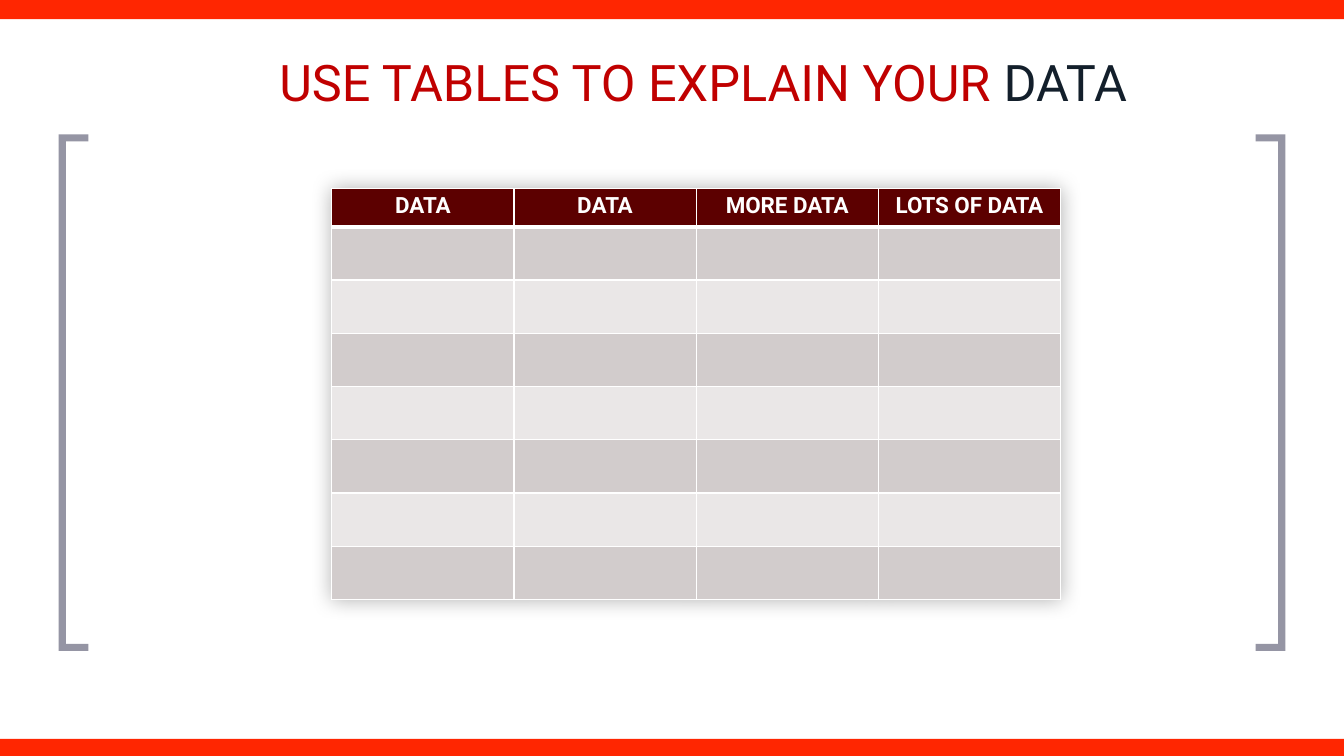
import pptx
import pptx.util
import pptx.dml.color
import pptx.enum.shapes
import pptx.enum.text
import pptx.oxml
import pptx.oxml.ns

WIDE = pptx.util.Inches(13.33)
HIGH = pptx.util.Inches(7.5)
FONT = "Roboto"
HEADS = ["DATA", "DATA", "MORE DATA", "LOTS OF DATA"]
BANDS = ["D2CCCC", "EAE7E7"]
ROWS = 8


def color(code):
    return pptx.dml.color.RGBColor.from_string(code)


def area(left, top, width, height):
    return (int(WIDE * left / 100), int(HIGH * top / 100),
            int(WIDE * width / 100), int(HIGH * height / 100))


def paint(shape, code):
    shape.shadow.inherit = False
    shape.fill.solid()
    shape.fill.fore_color.rgb = color(code)
    shape.line.fill.background()


def add_run(para, text, size, code, bold=False):
    run = para.add_run()
    run.text = text
    run.font.name = FONT
    run.font.size = pptx.util.Pt(size)
    run.font.bold = bold
    run.font.color.rgb = color(code)


def add_bar(slide, box):
    kind = pptx.enum.shapes.MSO_SHAPE.RECTANGLE
    paint(slide.shapes.add_shape(kind, *box), "FF2601")


def add_bracket(slide, box, flip):
    left, top, width, height = box
    thick = int(width * 0.24)
    points = [(0, 0), (width, 0), (width, thick), (thick, thick),
              (thick, height - thick), (width, height - thick),
              (width, height), (0, height)]
    points = [(left + (width - x if flip else x), top + y) for x, y in points]
    form = slide.shapes.build_freeform(*points[0])
    form.add_line_segments(points[1:], close=True)
    paint(form.convert_to_shape(), "9595A4")


def add_title(slide, box):
    title = slide.shapes.title
    title.left, title.top, title.width, title.height = box
    frame = title.text_frame
    frame.word_wrap = True
    frame.auto_size = pptx.enum.text.MSO_AUTO_SIZE.NONE
    frame.vertical_anchor = pptx.enum.text.MSO_ANCHOR.BOTTOM
    inset = pptx.util.Inches(0.1)
    frame.margin_left = frame.margin_right = inset
    frame.margin_top = frame.margin_bottom = inset
    para = frame.paragraphs[0]
    para.alignment = pptx.enum.text.PP_ALIGN.LEFT
    para.line_spacing = 0.9
    add_run(para, "USE TABLES TO EXPLAIN YOUR ", 36, "C00000")
    add_run(para, "DATA", 36, "131F2B")


def add_edges(cell, base):
    props = cell._tc.get_or_add_tcPr()
    for side, size in zip("LRTB", (1, 1, 1, base)):
        props.append(pptx.oxml.parse_xml(
            f'<a:ln{side} {pptx.oxml.ns.nsdecls("a")} w="{pptx.util.Pt(size)}">'
            '<a:solidFill><a:srgbClr val="FFFFFF"/></a:solidFill>'
            f'</a:ln{side}>'))


def add_shade(table):
    table._tbl.tblPr.insert(0, pptx.oxml.parse_xml(
        f'<a:effectLst {pptx.oxml.ns.nsdecls("a")}>'
        '<a:outerShdw blurRad="190500" dist="0" dir="0" algn="ctr">'
        '<a:srgbClr val="000000"><a:alpha val="30000"/></a:srgbClr>'
        '</a:outerShdw></a:effectLst>'))


def add_grid(slide, box):
    left, top, width, height = box
    table = slide.shapes.add_table(ROWS, len(HEADS), *box).table
    add_shade(table)
    for col in table.columns:
        col.width = width // len(HEADS)
    head = int(height * 0.093)
    for index, row in enumerate(table.rows):
        row.height = (height - head) // (ROWS - 1) if index else head
        for cell, text in zip(row.cells, HEADS):
            add_edges(cell, 1 if index else 3)
            cell.fill.solid()
            code = BANDS[(index - 1) % 2] if index else "5C0000"
            cell.fill.fore_color.rgb = color(code)
            cell.margin_left = cell.margin_right = pptx.util.Inches(0.09)
            cell.margin_top = cell.margin_bottom = pptx.util.Inches(0.04)
            if index == 0:
                para = cell.text_frame.paragraphs[0]
                para.alignment = pptx.enum.text.PP_ALIGN.CENTER
                add_run(para, text, 16, "FFFFFF", True)


def main():
    deck = pptx.Presentation()
    deck.slide_width, deck.slide_height = WIDE, HIGH
    slide = deck.slides.add_slide(deck.slide_layouts[5])
    for top in (97.73, 0):
        add_bar(slide, area(0, top, 100, 2.53))
    for left, flip in ((4.37, False), (93.43, True)):
        add_bracket(slide, area(left, 17.78, 2.2, 68.33), flip)
    add_title(slide, area(20.03, 6.13, 72.77, 10.13))
    add_grid(slide, area(24.68, 24.93, 54.24, 54.4))
    deck.save("out.pptx")


if __name__ == "__main__":
    main()
